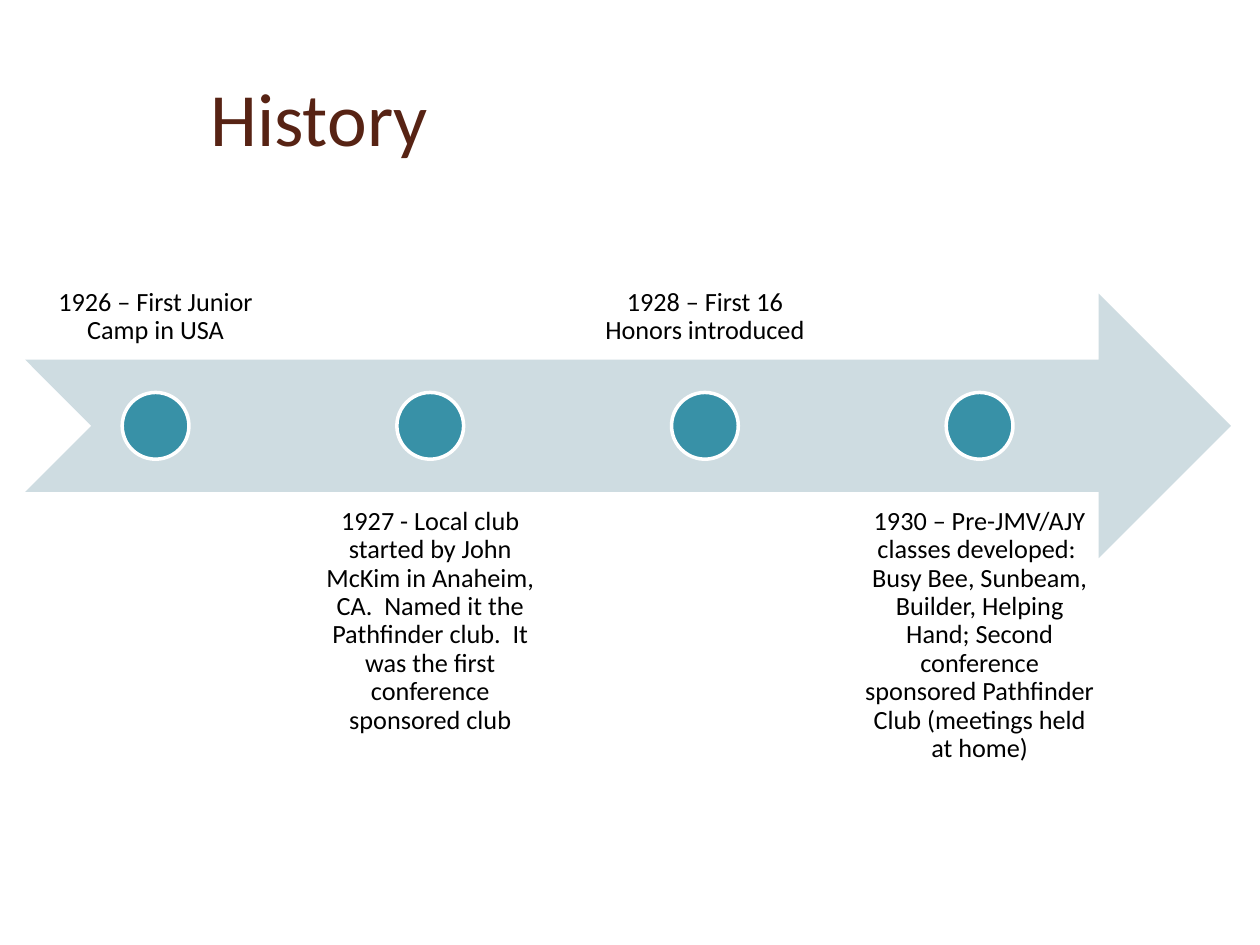
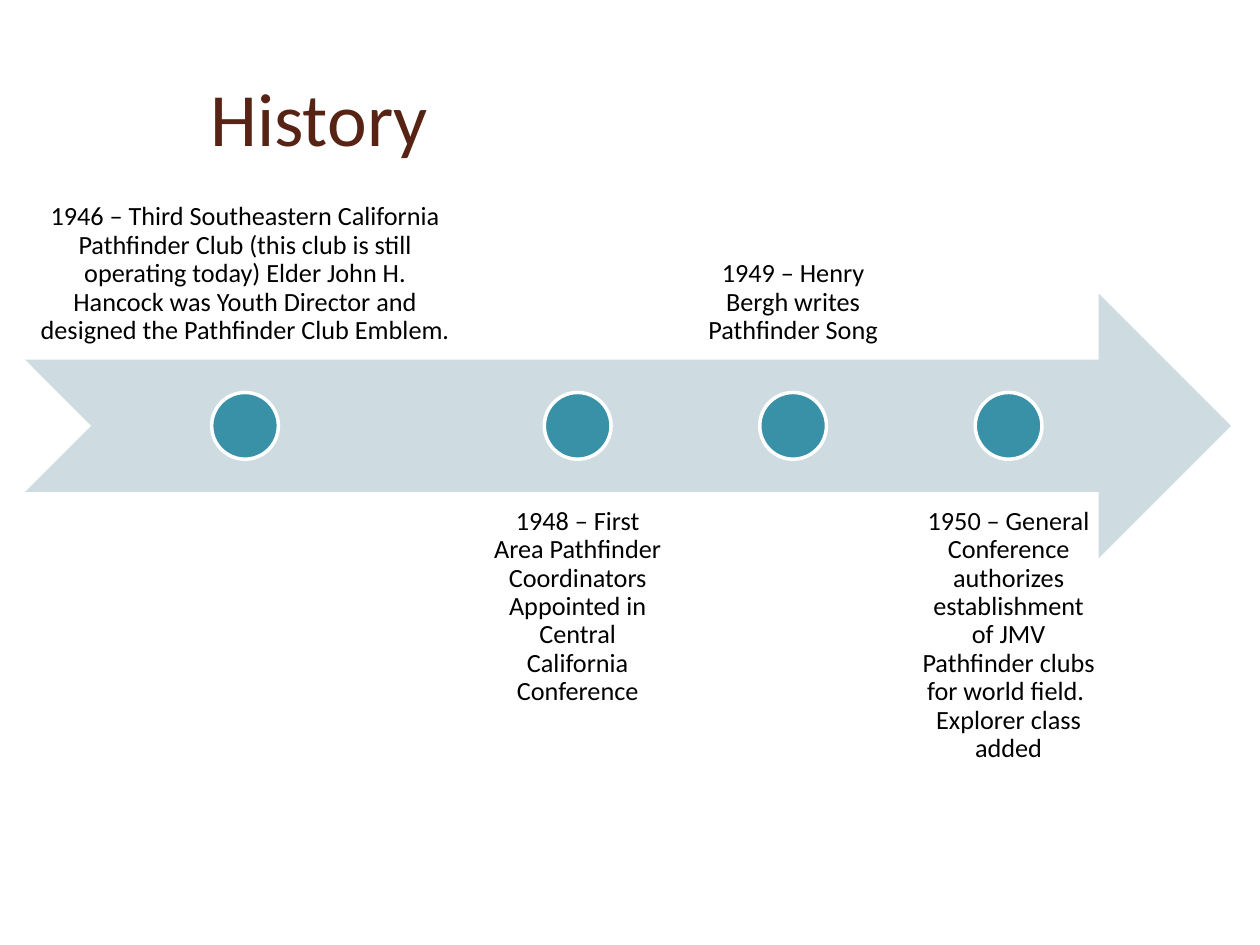
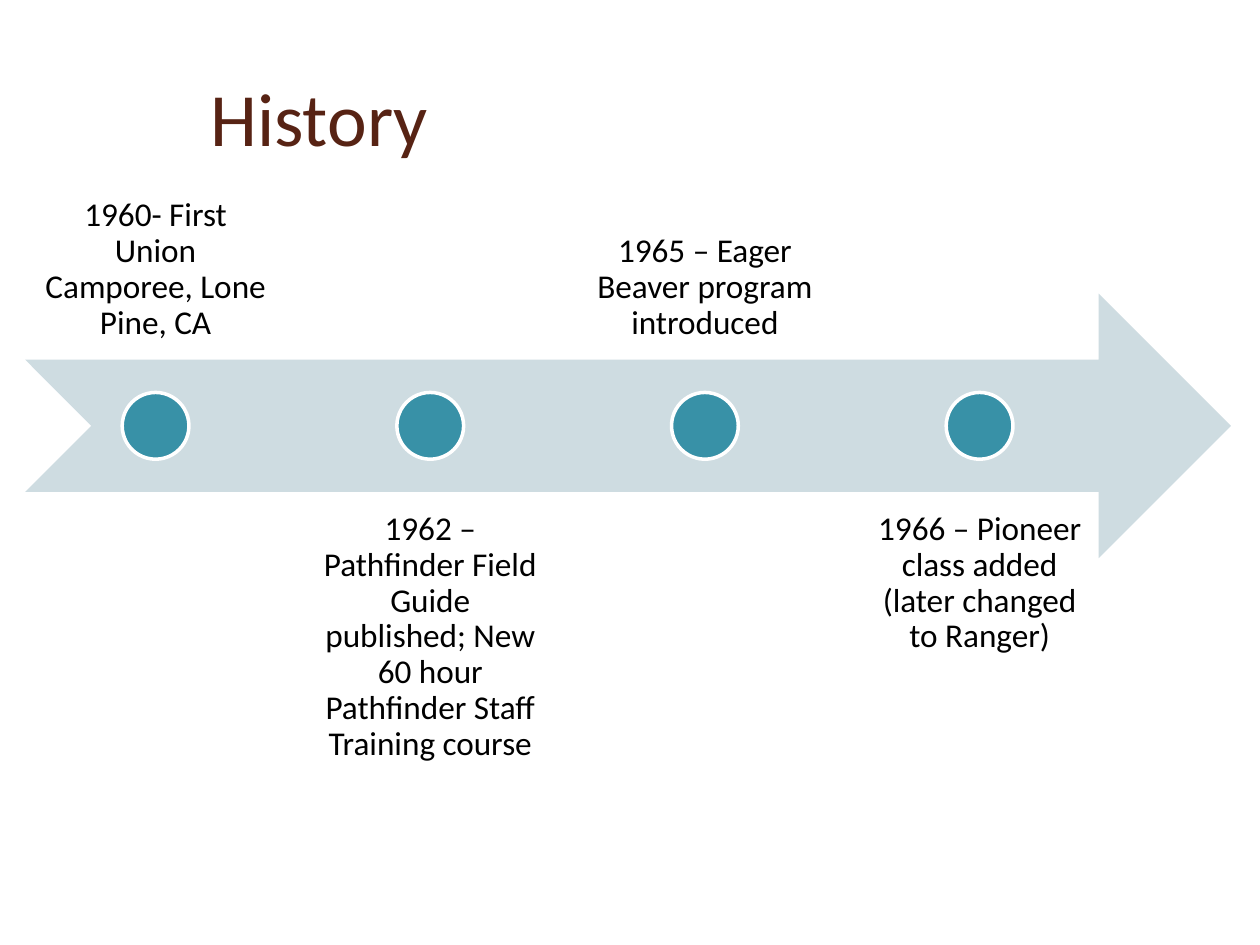
from pptx import Presentation
from pptx.dml.color import RGBColor
from pptx.enum.shapes import MSO_SHAPE
from pptx.enum.text import MSO_ANCHOR, MSO_AUTO_SIZE, PP_ALIGN
from pptx.util import Inches, Pt

# Content: one timeline per slide, with the width of each event's column
TIMELINES = [
    {
        "title": "History", "size": 15, "inset": 0.12, "gap": 0.11,
        "events": [
            (2.07, "1926 – First Junior Camp in USA"),
            (2.07, "1927 - Local club started by John McKim in Anaheim, CA.  Named it "
                   "the Pathfinder club.  It was the first conference sponsored club"),
            (2.07, "1928 – First 16 Honors introduced"),
            (2.07, "1930 – Pre-JMV/AJY classes developed:  Busy Bee, Sunbeam, Builder, "
                   "Helping Hand; Second conference sponsored Pathfinder Club "
                   "(meetings held at home)"),
        ],
    },
    {
        "title": "History", "size": 15, "inset": 0.12, "gap": 0.08,
        "events": [
            (3.49, "1946 – Third Southeastern California Pathfinder Club (this club is "
                   "still operating today) Elder John H. Hancock was Youth Director and "
                   "designed the Pathfinder Club Emblem."),
            (1.63, "1948 – First Area Pathfinder Coordinators Appointed in Central "
                   "California Conference"),
            (1.63, "1949 – Henry Bergh writes Pathfinder Song"),
            (1.63, "1950 – General Conference authorizes establishment of JMV Pathfinder "
                   "clubs for world field.  Explorer class added"),
        ],
    },
    {
        "title": "History", "size": 19, "inset": 0.15, "gap": 0.11,
        "events": [
            (2.07, "1960- First Union Camporee, Lone Pine, CA"),
            (2.07, "1962 – Pathfinder Field Guide published; New 60 hour Pathfinder "
                   "Staff Training course"),
            (2.07, "1965 – Eager Beaver program introduced"),
            (2.07, "1966 – Pioneer class added (later changed to Ranger)"),
        ],
    },
]

# Shared style
BROWN = RGBColor(0x57, 0x23, 0x14)
PALE_BLUE = RGBColor(0xCE, 0xDC, 0xE1)
TEAL = RGBColor(0x38, 0x91, 0xA7)
WHITE = RGBColor(0xFF, 0xFF, 0xFF)
BLACK = RGBColor(0x00, 0x00, 0x00)
FONT = "Calibri"

# Shared geometry in inches
TITLE_BOX = (1.57, 0.3, 8.2, 1.25)
ARROW_LEFT, ARROW_TOP, ARROW_WIDTH, BAND = 0.2, 2.33, 9.57, 2.1
LABEL_ABOVE, LABEL_BELOW = 0.76, 3.91
DOT = 0.53
DOT_TOP = ARROW_TOP + (BAND - DOT) / 2


def set_text(shape, text, frame_format, paragraph_format, size, color):
    frame = shape.text_frame
    frame.text = text
    for name, value in frame_format.items():
        setattr(frame, name, value)
    paragraph = frame.paragraphs[0]
    for name, value in paragraph_format.items():
        setattr(paragraph, name, value)
    font = paragraph.runs[0].font
    font.name, font.size = FONT, Pt(size)
    font.color.rgb = color


def add_filled_shape(slide, kind, box, color):
    shape = slide.shapes.add_shape(kind, *map(Inches, box))
    shape.shadow.inherit = False
    shape.fill.solid()
    shape.fill.fore_color.rgb = color
    shape.line.fill.background()
    return shape


def add_title(slide, text):
    title = slide.shapes.title
    title.left, title.top, title.width, title.height = map(Inches, TITLE_BOX)
    set_text(title, text,
             {"auto_size": MSO_AUTO_SIZE.NONE, "vertical_anchor": MSO_ANCHOR.MIDDLE},
             {"alignment": PP_ALIGN.LEFT}, 43, BROWN)


def add_event(slide, left, width, text, above, timeline):
    top = LABEL_ABOVE if above else LABEL_BELOW
    label = slide.shapes.add_textbox(*map(Inches, (left, top, width, BAND)))
    frame_format = {"word_wrap": True,
                    "vertical_anchor": MSO_ANCHOR.BOTTOM if above else MSO_ANCHOR.TOP}
    for side in ("left", "top", "right", "bottom"):
        frame_format[f"margin_{side}"] = Inches(timeline["inset"])
    set_text(label, text, frame_format,
             {"alignment": PP_ALIGN.CENTER, "line_spacing": 0.9},
             timeline["size"], BLACK)

    # Marker centred under or over its label
    dot = add_filled_shape(slide, MSO_SHAPE.OVAL,
                           (left + (width - DOT) / 2, DOT_TOP, DOT, DOT), TEAL)
    dot.line.color.rgb = WHITE
    dot.line.width = Pt(2)


def add_timeline(slide, timeline):
    add_title(slide, timeline["title"])
    add_filled_shape(slide, MSO_SHAPE.NOTCHED_RIGHT_ARROW,
                     (ARROW_LEFT, ARROW_TOP, ARROW_WIDTH, BAND), PALE_BLUE)
    left = ARROW_LEFT
    for index, (width, text) in enumerate(timeline["events"]):
        add_event(slide, left, width, text, index % 2 == 0, timeline)
        left += width + timeline["gap"]


def main():
    presentation = Presentation()
    presentation.slide_width, presentation.slide_height = Inches(10), Inches(7.5)
    title_only = presentation.slide_layouts[5]
    for timeline in TIMELINES:
        add_timeline(presentation.slides.add_slide(title_only), timeline)
    presentation.save("out.pptx")


if __name__ == "__main__":
    main()
